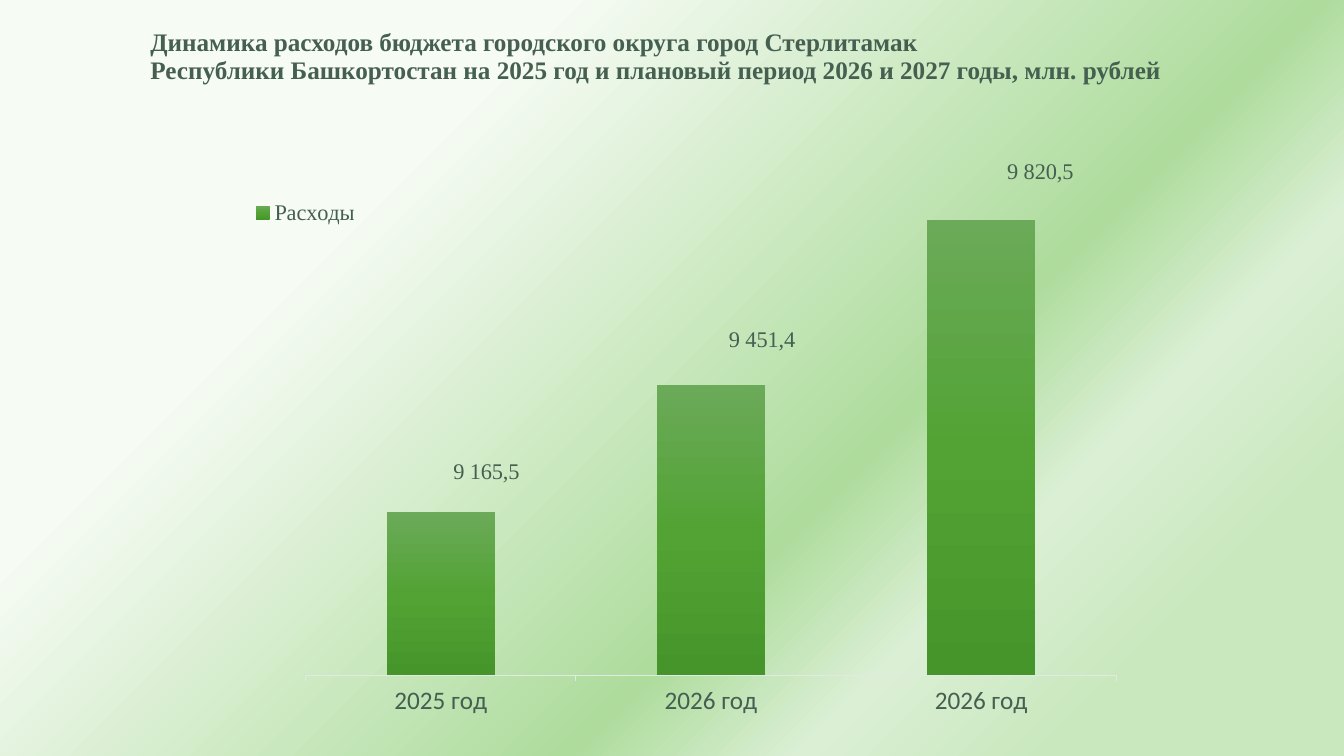
from dataclasses import dataclass
from typing import Any

from lxml.etree import SubElement as Sub
from pptx import Presentation
from pptx.chart.data import CategoryChartData as Data
from pptx.dml.color import RGBColor as Color
from pptx.enum.chart import XL_CHART_TYPE as Kind
from pptx.enum.chart import XL_LABEL_POSITION as Spot
from pptx.enum.chart import XL_LEGEND_POSITION as Side
from pptx.enum.chart import XL_TICK_MARK as Tick
from pptx.enum.text import MSO_ANCHOR as Anchor
from pptx.oxml.ns import qn
from pptx.util import Inches, Pt

WIDE, HIGH = Inches(13.34), Inches(7.5)
INK = Color(0x45, 0x5F, 0x51)
RULE = Color(0xE1, 0xE9, 0xE5)
MIST = Color(0xF6, 0xFB, 0xF4)
LEAF = Color(0xAE, 0xDC, 0x9D)
PALE = Color(0xDB, 0xEF, 0xD4)
LIME = Color(0xC9, 0xE8, 0xBE)
MOSS = Color(0x6B, 0xAA, 0x59)
GRASS = Color(0x52, 0xA3, 0x34)
FERN = Color(0x46, 0x95, 0x2A)

SERIF = "Times New Roman"
HEAD = {"name": SERIF, "size": Pt(18), "bold": True}
NOTE = {"name": SERIF, "size": Pt(16), "bold": False}
MARK = {"name": SERIF, "size": Pt(16), "bold": True}
YEAR = {"name": "Calibri", "size": Pt(18), "bold": False}
TITLE = (
    "Динамика расходов бюджета городского округа город Стерлитамак \v"
    "Республики Башкортостан на 2025 год и плановый период 2026 и 2027 годы, млн. рублей"
)


@dataclass
class Area:
    left: float
    top: float
    width: float
    height: float

    def place(self) -> tuple[int, int, int, int]:
        return (int(self.left * WIDE / 100), int(self.top * HIGH / 100),
                int(self.width * WIDE / 100), int(self.height * HIGH / 100))


@dataclass
class Stop:
    share: int
    color: Color
    alpha: int = 100


@dataclass
class Bar:
    year: str
    value: float
    label: str
    right: float
    down: float


BARS = [
    Bar("2025 год", 9165.5, "9 165,5", 5.1, -4),
    Bar("2026 год", 9451.4, "9 451,4", 5.7, -4.7),
    Bar("2026 год", 9820.5, "9 820,5", 6.6, -5.2),
]


def style(font: Any, form: dict[str, Any]) -> None:
    for key, value in form.items():
        setattr(font, key, value)
    font.color.rgb = INK


def blend(fill: Any, root: Any, angle: int, stops: list[Stop]) -> None:
    fill.gradient()
    fill.gradient_angle = 360 - angle
    rows = next(root.iter(qn("a:gsLst")))
    for old in list(rows):
        rows.remove(old)
    for stop in stops:
        row = Sub(rows, qn("a:gs"), pos=str(stop.share * 1000))
        tone = Sub(row, qn("a:srgbClr"), val=str(stop.color))
        if stop.alpha < 100:
            Sub(tone, qn("a:alpha"), val=str(stop.alpha * 1000))


def layout(host: Any, index: int, modes: dict[str, str], **shares: float) -> None:
    for old in host.findall(qn("c:layout")):
        host.remove(old)
    node = Sub(host, qn("c:layout"))
    inner = Sub(node, qn("c:manualLayout"))
    sizes = {key: f"{share / 100:.4f}" for key, share in shares.items()}
    for key, value in (modes | sizes).items():
        Sub(inner, qn(f"c:{key}"), val=value)
    host.insert(index, node)


def title(slide: Any, area: Area) -> None:
    frame = slide.shapes.add_textbox(*area.place()).text_frame
    frame.word_wrap = True
    frame.vertical_anchor = Anchor.MIDDLE
    line = frame.paragraphs[0]
    line.text = TITLE
    line.line_spacing = 0.9
    for run in line.runs:
        style(run.font, HEAD)


def axes(chart: Any) -> None:
    years, scale = chart.category_axis, chart.value_axis
    years.major_tick_mark = Tick.OUTSIDE
    years.format.line.color.rgb = RULE
    years.format.line.width = Pt(0.75)
    style(years.tick_labels.font, YEAR)
    scale.tick_labels.number_format = "0.0"
    form = {"minimum_scale": 8800, "maximum_scale": 10000,
            "has_major_gridlines": False, "visible": False}
    for key, value in form.items():
        setattr(scale, key, value)


def legend(chart: Any) -> None:
    chart.has_legend = True
    key = chart.legend
    key.position = Side.LEFT
    key.include_in_layout = False
    style(key.font, NOTE)
    layout(key._element, 1, {"xMode": "edge", "yMode": "edge"}, x=2.35, y=12)


def labels(series: Any) -> None:
    marks = series.data_labels
    form = {"show_value": True, "number_format": "0.0",
            "number_format_is_linked": False, "position": Spot.OUTSIDE_END}
    for key, value in form.items():
        setattr(marks, key, value)
    style(marks.font, MARK)
    for point, bar in enumerate(BARS):
        label = series.points[point].data_label
        line = label.text_frame.paragraphs[0]
        line.text = bar.label
        style(line.runs[0].font, NOTE)
        label.position = Spot.OUTSIDE_END
        node = marks._element.findall(qn("c:dLbl"))[point]
        layout(node, 1, {}, x=bar.right, y=bar.down)
    for lead in marks._element.findall(qn("c:showLeaderLines")):
        lead.set("val", "0")


def graph(slide: Any, area: Area) -> None:
    data = Data(number_format="0.0")
    data.categories = [bar.year for bar in BARS]
    data.add_series("Расходы", [bar.value for bar in BARS])
    chart = slide.shapes.add_chart(Kind.COLUMN_CLUSTERED, *area.place(), data).chart
    chart.has_title = False
    chart.font.name, chart.font.size = "Calibri", Pt(10)
    plot = chart.plots[0]
    plot.gap_width, plot.vary_by_categories = 150, False
    series = plot.series[0]
    blend(series.format.fill, series._element, 90,
          [Stop(0, MOSS), Stop(50, GRASS), Stop(100, FERN)])
    axes(chart)
    legend(chart)
    labels(series)
    pane = next(chart._chartSpace.iter(qn("c:plotArea")))
    modes = {"layoutTarget": "inner", "xMode": "edge", "yMode": "edge"}
    layout(pane, 0, modes, x=8.7, y=2.7, w=90.5, h=89.6)


def main() -> None:
    deck = Presentation()
    deck.slide_width, deck.slide_height = WIDE, HIGH
    slide = deck.slides.add_slide(deck.slide_layouts[6])
    blend(slide.background.fill, slide._element, 45,
          [Stop(27, MIST, 82), Stop(63, LEAF), Stop(74, PALE), Stop(86, LIME)])
    title(slide, Area(10.45, 4, 85.6, 7.2))
    graph(slide, Area(16.95, 16.4, 66.65, 79.05))
    deck.save("out.pptx")


if __name__ == "__main__":
    main()
